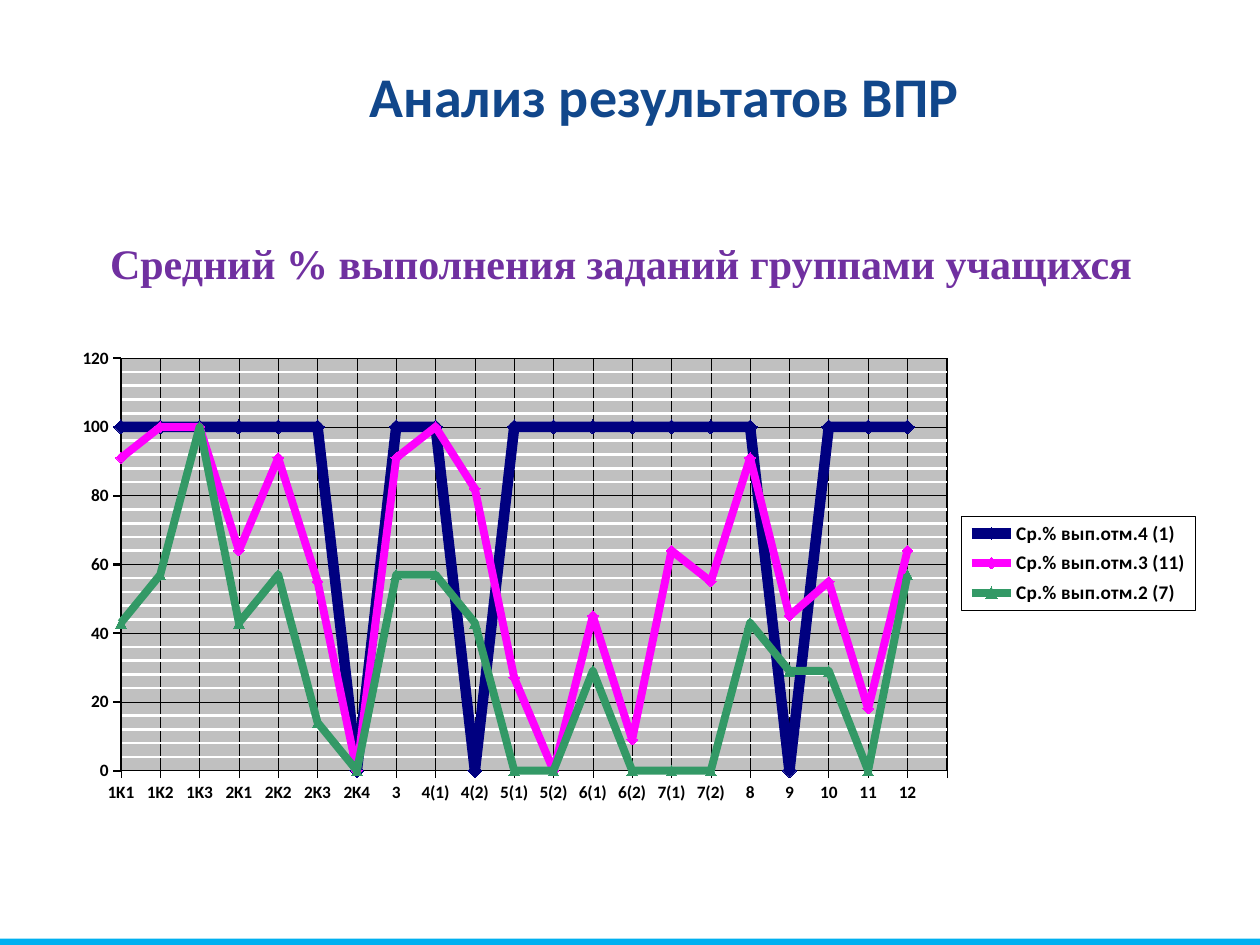
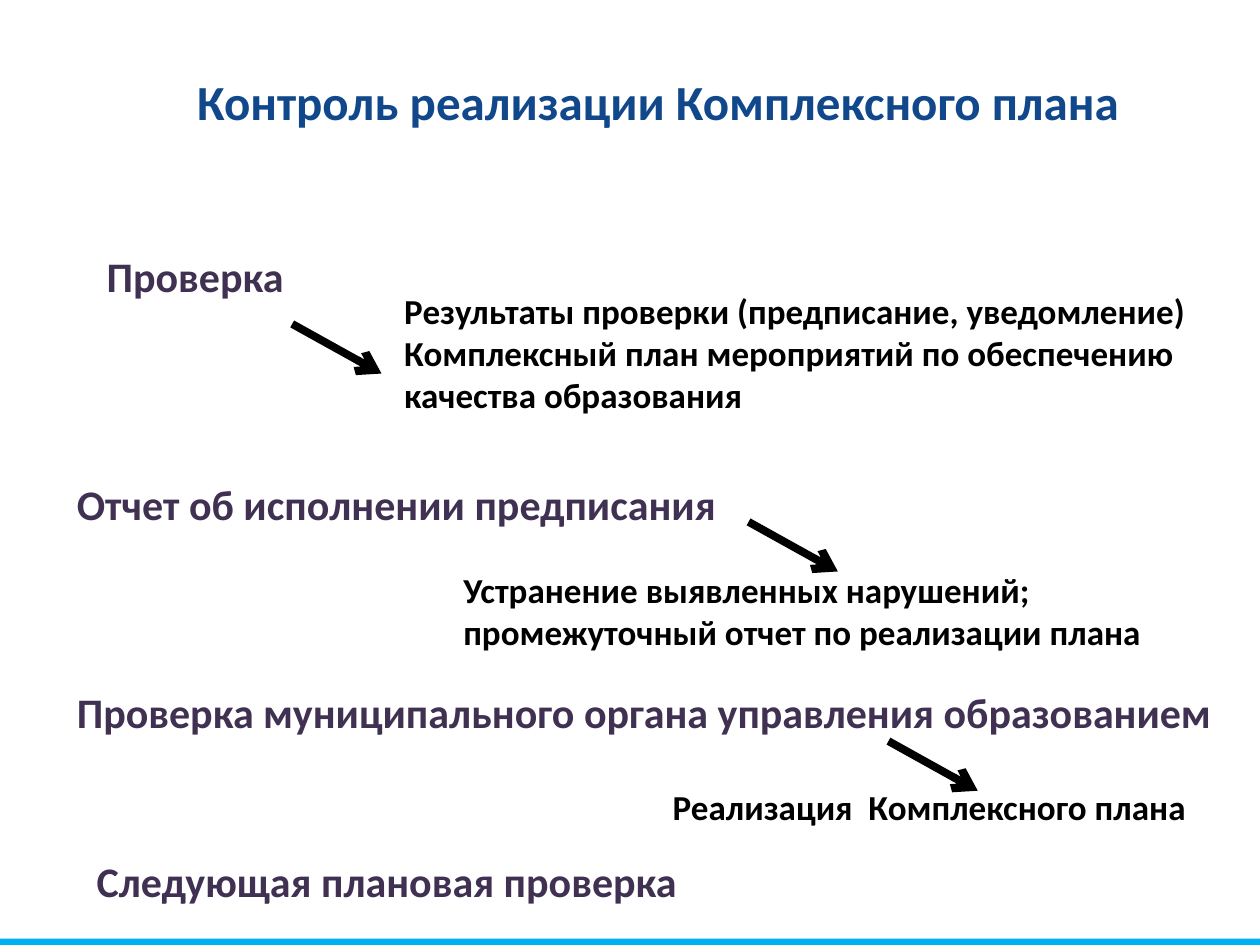
from collections import namedtuple

from lxml.etree import SubElement
from pptx import Presentation
from pptx.chart.data import CategoryChartData
from pptx.dml.color import RGBColor
from pptx.enum.chart import XL_CHART_TYPE, XL_LEGEND_POSITION, XL_MARKER_STYLE, XL_TICK_MARK
from pptx.enum.shapes import MSO_CONNECTOR, MSO_SHAPE
from pptx.enum.text import MSO_ANCHOR, MSO_AUTO_SIZE, PP_ALIGN
from pptx.oxml import parse_xml
from pptx.oxml.ns import nsdecls, qn
from pptx.util import Cm, Pt

COLORS = {
    "band": "00B0F0",
    "heading": "11478B",
    "subtitle": "7030A0",
    "step": "403152",
    "ink": "000000",
    "paper": "FFFFFF",
    "plot": "C0C0C0",
    "mark 4": "000080",
    "mark 3": "FF00FF",
    "mark 2": "339966",
}
BODY_FONT = "Calibri"
TITLE_FONT = "Times New Roman"
TITLE_ONLY = 5

Box = namedtuple("Box", "left top width height")
Series = namedtuple("Series", "name values color width marker size")
Stage = namedtuple("Stage", "step arrow result lines wrap")

TASKS = ["1K1", "1K2", "1K3", "2K1", "2K2", "2K3", "2K4", "3", "4(1)", "4(2)", "5(1)",
         "5(2)", "6(1)", "6(2)", "7(1)", "7(2)", "8", "9", "10", "11", "12"]
GROUPS = [
    Series("Ср.% вып.отм.4 (1)",
           [100, 100, 100, 100, 100, 100, 0, 100, 100, 0, 100,
            100, 100, 100, 100, 100, 100, 0, 100, 100, 100],
           "mark 4", 6, XL_MARKER_STYLE.DIAMOND, 8),
    Series("Ср.% вып.отм.3 (11)",
           [91, 100, 100, 64, 91, 55, 0, 91, 100, 82, 27,
            0, 45, 9, 64, 55, 91, 45, 55, 18, 64],
           "mark 3", 4.5, XL_MARKER_STYLE.DIAMOND, 6),
    Series("Ср.% вып.отм.2 (7)",
           [43, 57, 100, 43, 57, 14, 0, 57, 57, 43, 0,
            0, 29, 0, 0, 0, 43, 29, 29, 0, 57],
           "mark 2", 4.5, XL_MARKER_STYLE.TRIANGLE, 6),
]

# Places of steps, arrows and results are offsets in the flow region, in cm.
STAGES = [
    Stage(("Проверка", Box(0.6, 0, 4.11, 1.27)), (4.59, 1.6), Box(6.6, 0.79, 16.79, 2.82),
          ["Результаты проверки (предписание, уведомление)",
           "Комплексный план мероприятий по обеспечению качества образования"], True),
    Stage(("Отчет об исполнении предписания", Box(0, 4.6, 13.51, 1.27)),
          (13.79, 5.59), Box(7.79, 6.4, 14.27, 1.96),
          ["Устранение выявленных нарушений;",
           "промежуточный отчет по реализации плана"], False),
    Stage(("Проверка муниципального органа управления образованием",
           Box(0, 8.79, 23.62, 1.27)),
          (16.61, 10.01), Box(12.01, 10.79, 10.95, 1.12),
          ["Реализация  Комплексного плана"], False),
]
LAST_STEP = ("Следующая плановая проверка", Box(0.4, 12.19, 12.34, 1.27))
ARROW_RUN, ARROW_DROP = 1.8, 1.0


def color(name):
    return RGBColor.from_string(COLORS[name])


def lengths(box):
    return [Cm(value) for value in box]


def inside(region, box):
    """Turn a box given relative to a region into a box on the slide."""
    return box._replace(left=region.left + box.left, top=region.top + box.top)


def format_font(font, size, color_name, name=BODY_FONT):
    font.size, font.bold, font.name = Pt(size), True, name
    font.color.rgb = color(color_name)


def format_line(line, color_name, width):
    line.color.rgb = color(color_name)
    line.width = Pt(width)


def write(frame, lines, size, color_name, font=BODY_FONT, align=PP_ALIGN.LEFT):
    for number, line in enumerate(lines):
        para = frame.add_paragraph() if number else frame.paragraphs[0]
        para.alignment = align
        span = para.add_run()
        span.text = line
        format_font(span.font, size, color_name, font)


def add_text(page, box, lines, size, color_name, wrap=False, align=PP_ALIGN.LEFT):
    frame = page.shapes.add_textbox(*lengths(box)).text_frame
    frame.word_wrap = wrap
    frame.auto_size = MSO_AUTO_SIZE.SHAPE_TO_FIT_TEXT
    write(frame, lines, size, color_name, align=align)


def set_title(page, box, text, size, color_name, font, anchor):
    title = page.shapes.title
    title.left, title.top, title.width, title.height = lengths(box)
    frame = title.text_frame
    frame.auto_size = MSO_AUTO_SIZE.NONE
    frame.vertical_anchor = anchor
    write(frame, [text], size, color_name, font, PP_ALIGN.CENTER)


def add_page(deck):
    return deck.slides.add_slide(deck.slide_layouts[TITLE_ONLY])


def add_master_band(deck, page):
    """Draw the bottom band and move it to the master, behind all else."""
    band = page.shapes.add_shape(MSO_SHAPE.RECTANGLE, *lengths(Box(0, 18.92, 25.4, 0.13)))
    band.shadow.inherit = False
    band.fill.solid()
    band.fill.fore_color.rgb = color("band")
    band.line.fill.background()
    band.element.nvSpPr.cNvPr.set("id", "100")
    deck.slide_master.shapes.element.insert(2, band.element)


def layout_xml(left, top, width, height, inner=False):
    target = '<c:layoutTarget val="inner"/>' if inner else ""
    return parse_xml(
        f'<c:layout {nsdecls("c")}><c:manualLayout>{target}'
        '<c:xMode val="edge"/><c:yMode val="edge"/>'
        f'<c:x val="{left}"/><c:y val="{top}"/><c:w val="{width}"/><c:h val="{height}"/>'
        '</c:manualLayout></c:layout>')


def outline_xml(line, width, fill=None):
    """Chart part properties: a line and, if named, a fill."""
    solid = '<a:solidFill><a:srgbClr val="{}"/></a:solidFill>'
    inside_fill = solid.format(COLORS[fill]) if fill else ""
    return parse_xml(
        f'<c:spPr {nsdecls("c", "a")}>{inside_fill}'
        f'<a:ln w="{Pt(width)}">{solid.format(COLORS[line])}</a:ln></c:spPr>')


def clear_layout(parent):
    for layout in parent.findall(qn("c:layout")):
        parent.remove(layout)


def arrange_plot(chart):
    plot_area = chart.element.xpath(".//c:plotArea")[0]
    clear_layout(plot_area)
    plot_area.insert(0, layout_xml(0.055, 0.068, 0.722, 0.816, inner=True))
    plot_area.append(outline_xml("ink", 0.5, "plot"))
    for old in plot_area.xpath("c:valAx/c:crossBetween"):
        old.getparent().remove(old)
    crosses = plot_area.xpath("c:valAx/c:crosses")[0]
    crosses.addnext(parse_xml(f'<c:crossBetween {nsdecls("c")} val="midCat"/>'))


def arrange_legend(chart):
    chart.has_legend = True
    chart.legend.position = XL_LEGEND_POSITION.RIGHT
    chart.legend.include_in_layout = False
    format_font(chart.legend.font, 11, "ink")
    legend = chart.element.xpath(".//c:legend")[0]
    clear_layout(legend)
    legend.find(qn("c:legendPos")).addnext(layout_xml(0.79, 0.38, 0.204, 0.187))
    legend.find(qn("c:overlay")).addnext(outline_xml("ink", 0.5, "paper"))


def format_axes(chart):
    for axis, width in ((chart.category_axis, 0.31), (chart.value_axis, 1.25)):
        axis.major_tick_mark = XL_TICK_MARK.OUTSIDE
        axis.minor_tick_mark = XL_TICK_MARK.NONE
        axis.has_major_gridlines = True
        format_line(axis.major_gridlines.format.line, "ink", 0.31)
        format_line(axis.format.line, "ink", width)
        format_font(axis.tick_labels.font, 9.9, "ink")
    scale = chart.value_axis
    scale.minimum_scale, scale.maximum_scale = 0, 120
    scale.major_unit, scale.minor_unit = 20, 4
    scale.has_minor_gridlines = True
    chart.element.xpath(".//c:minorGridlines")[0].append(outline_xml("paper", 1.5))


def add_results_chart(page, box):
    data = CategoryChartData()
    data.categories = TASKS + [""]
    for group in GROUPS:
        data.add_series(group.name, group.values + [None])
    chart = page.shapes.add_chart(XL_CHART_TYPE.LINE_MARKERS, *lengths(box), data).chart
    chart.has_title = False
    format_font(chart.font, 14.8, "ink")
    chart.plots[0].vary_by_categories = False
    for series, group in zip(chart.plots[0].series, GROUPS):
        series.smooth = False
        format_line(series.format.line, group.color, group.width)
        marker = series.marker
        marker.style, marker.size = group.marker, group.size
        marker.format.fill.solid()
        marker.format.fill.fore_color.rgb = color(group.color)
        format_line(marker.format.line, group.color, 0.75)
    format_axes(chart)
    arrange_plot(chart)
    arrange_legend(chart)


def add_arrow(page, left, top):
    arrow = page.shapes.add_connector(
        MSO_CONNECTOR.STRAIGHT, Cm(left), Cm(top),
        Cm(left + ARROW_RUN), Cm(top + ARROW_DROP))
    format_line(arrow.line, "ink", 4.5)
    properties = arrow.element.spPr
    SubElement(properties.find(qn("a:ln")), qn("a:tailEnd"), type="arrow")
    SubElement(properties, qn("a:effectLst"))


def add_step(page, region, step):
    text, box = step
    add_text(page, inside(region, box), [text], 24, "step")


def add_control_flow(page, region):
    for stage in STAGES:
        add_step(page, region, stage.step)
        add_text(page, inside(region, stage.result), stage.lines, 20, "ink", stage.wrap)
        left, top = stage.arrow
        add_arrow(page, region.left + left, region.top + top)
    add_step(page, region, LAST_STEP)


def build_results_page(page):
    set_title(page, Box(0.99, 4.52, 23.06, 1.57),
              "Средний % выполнения заданий группами учащихся",
              24, "subtitle", TITLE_FONT, MSO_ANCHOR.MIDDLE)
    add_results_chart(page, Box(1.17, 6.53, 23.06, 10.19))
    add_text(page, Box(4.9, 1.12, 16.99, 2.21), ["Анализ результатов ВПР"],
             32, "heading", wrap=True, align=PP_ALIGN.CENTER)


def build_control_page(page):
    set_title(page, Box(1.83, 1.32, 22.86, 2.16), "Контроль реализации Комплексного плана",
              28, "heading", BODY_FONT, MSO_ANCHOR.TOP)
    add_control_flow(page, Box(1.3, 4.93, 23.62, 13.46))


def main():
    deck = Presentation()
    deck.slide_width, deck.slide_height = Cm(25.4), Cm(19.05)
    results_page = add_page(deck)
    add_master_band(deck, results_page)
    build_results_page(results_page)
    build_control_page(add_page(deck))
    deck.save("out.pptx")


if __name__ == "__main__":
    main()
